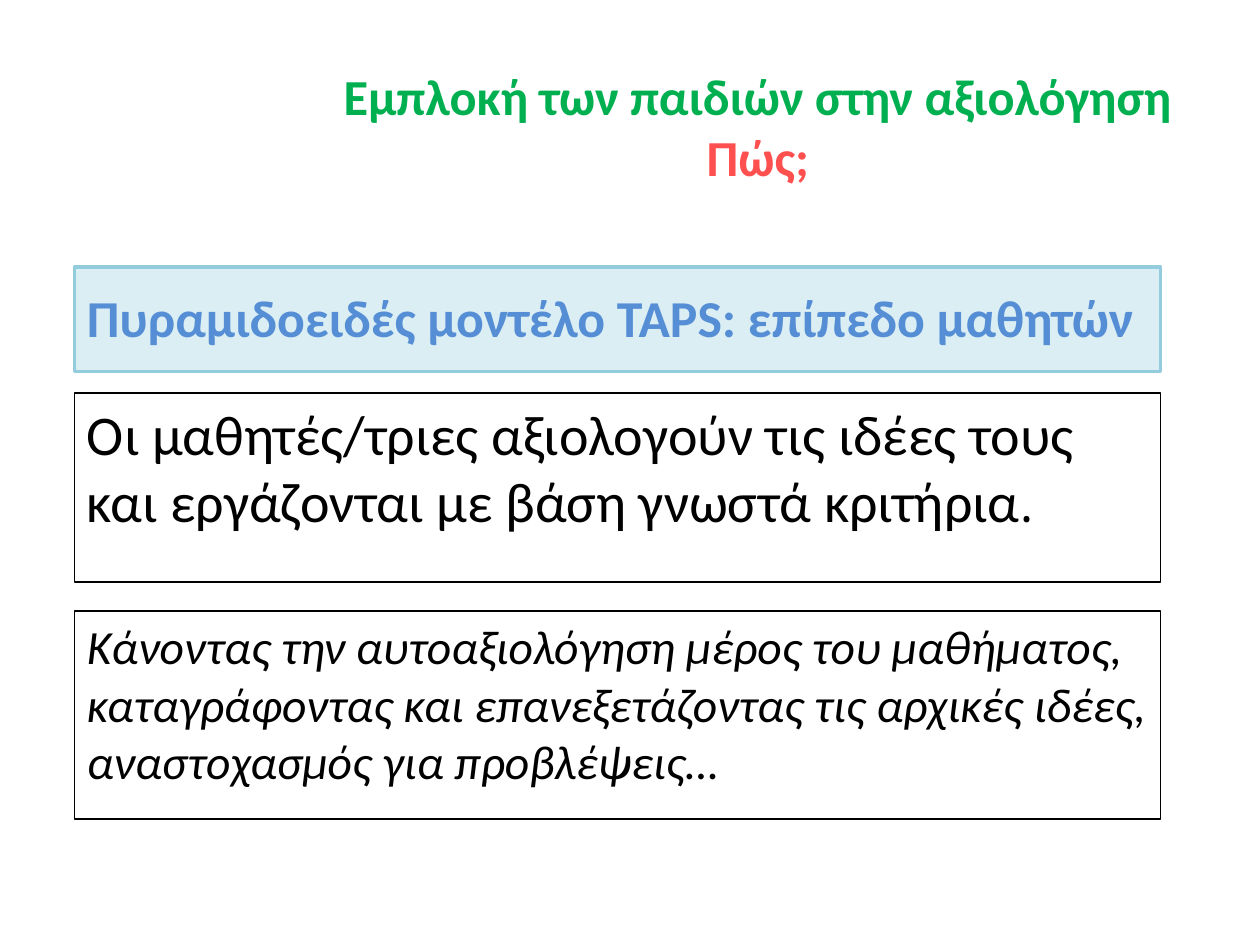
"""Build a slide on how pupils take part in assessment."""
import pptx
import pptx.dml.color
import pptx.enum.shapes
import pptx.enum.text
import pptx.util
from lxml import etree

RGBColor = pptx.dml.color.RGBColor
Pt = pptx.util.Pt
ALIGN = pptx.enum.text.PP_ALIGN
ANCHOR = pptx.enum.text.MSO_ANCHOR

GREEN = RGBColor(0x00, 0xB0, 0x50)
RED = RGBColor(0xFF, 0x50, 0x50)
BLACK = RGBColor(0x00, 0x00, 0x00)
BLUE = RGBColor(0x55, 0x8E, 0xD5)
PALE = RGBColor(0xDB, 0xEE, 0xF4)
AQUA = RGBColor(0x93, 0xCD, 0xDD)

deck = pptx.Presentation()
deck.slide_width = pptx.util.Inches(10)
deck.slide_height = pptx.util.Inches(7.5)
unit = deck.slide_width // 100
slide = deck.slides.add_slide(deck.slide_layouts[1])
title, body = slide.placeholders


def place(shape, left, top, width, height, anchor=ANCHOR.TOP):
    shape.left, shape.top = int(left * unit), int(top * unit)
    shape.width, shape.height = int(width * unit), int(height * unit)
    frame = shape.text_frame
    frame.word_wrap = True
    frame.auto_size = pptx.enum.text.MSO_AUTO_SIZE.NONE
    frame.vertical_anchor = anchor
    return frame.paragraphs[0]


def write(para, text, size, color, bold=False, italic=False, face="Calibri"):
    run = para.add_run()
    run.text = text
    font = run.font
    font.name, font.size = face, Pt(size)
    font.bold, font.italic = bold, italic
    font.color.rgb = color


head = place(title, 23.1, 3, 74.1, 14, ANCHOR.MIDDLE)
head.alignment = ALIGN.CENTER
write(head, "Εμπλοκή των παιδιών στην αξιολόγηση", 28.8, GREEN, bold=True)
head.add_line_break()
write(head, "Πώς;", 28.8, RED, bold=True)

band, note = [
    slide.shapes.add_shape(pptx.enum.shapes.MSO_SHAPE.RECTANGLE, 0, 0, unit, unit)
    for _ in range(2)
]
rows = [
    (band, 21.2, 8.3, PALE, AQUA, 2),
    (body, 31.2, 15, None, BLACK, 0.75),
    (note, 48.5, 16.5, None, BLACK, 0.75),
]
paras = []
for box, top, height, fill, edge, weight in rows:
    para = place(box, 5.9, top, 86.2, height)
    para.alignment = ALIGN.LEFT
    para.space_before = Pt(0)
    if fill is None:
        box.fill.background()
    else:
        box.fill.solid()
        box.fill.fore_color.rgb = fill
    box.line.color.rgb = edge
    box.line.width = Pt(weight)
    paras.append(para)
band.shadow.inherit = note.shadow.inherit = False

model, rule, ways = paras
model.line_spacing = 1.2
write(model, "Πυραμιδοειδές μοντέλο TAPS: επίπεδο μαθητών", 29.6, BLUE, bold=True)

props = rule._p.get_or_add_pPr()
props.set("marL", "0")
props.set("indent", "0")
etree.SubElement(props, pptx.oxml.ns.qn("a:buNone"))
write(rule, "Οι μαθητές/τριες αξιολογούν τις ιδέες τους και εργάζονται "
      "με βάση γνωστά κριτήρια", 32, BLACK)
write(rule, ".", 32, BLACK, face="Cambria")

write(ways, "Κάνοντας την αυτοαξιολόγηση μέρος του μαθήματος, καταγράφοντας "
      "και επανεξετάζοντας τις αρχικές ιδέες, αναστοχασμός για προβλέψεις…",
      27.2, BLACK, italic=True)

deck.save("out.pptx")
